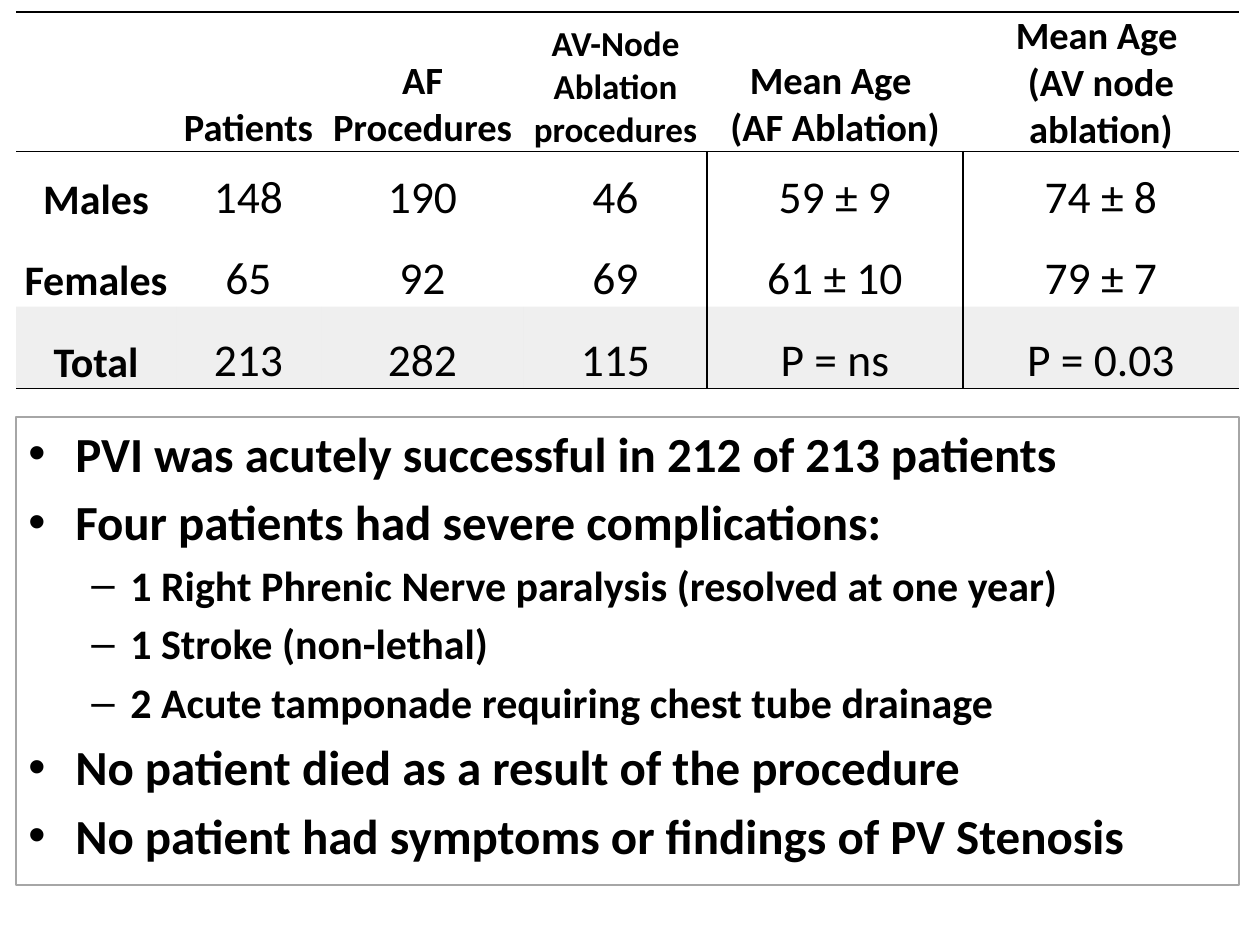
from dataclasses import dataclass

from lxml.etree import SubElement as Sub
from pptx import Presentation
from pptx.dml.color import RGBColor as RGB
from pptx.enum.text import MSO_ANCHOR as Anchor, MSO_AUTO_SIZE as Auto, PP_ALIGN as Align
from pptx.oxml.ns import qn
from pptx.util import Emu, Pt

HEAD = ["", "Patients", "AF\nProcedures", "AV-Node Ablation procedures",
        "Mean Age \n(AF Ablation)", "Mean Age \n(AV node ablation)"]
ROWS = [
    ["Males", "148", "190", "46", "59 ± 9", "74 ± 8"],
    ["Females", "65", "92", "69", "61 ± 10", "79 ± 7"],
    ["Total", "213", "282", "115", "P = ns", "P = 0.03"],
]
POINTS = [
    (0, "PVI was acutely successful in 212 of 213 patients"),
    (0, "Four patients had severe complications:"),
    (1, "1 Right Phrenic Nerve paralysis (resolved at one year)"),
    (1, "1 Stroke (non-lethal)"),
    (1, "2 Acute tamponade requiring chest tube drainage"),
    (0, "No patient died as a result of the procedure"),
    (0, "No patient had symptoms or findings of PV Stenosis"),
]
WIDTHS = [160, 145, 203, 183, 256, 276]
HEIGHTS = [131, 74, 81, 82]
LEFT, TABLE_TOP, BOX_TOP, BOX_HIGH = 16, 12, 417, 468
LEVELS = [("•", 47, 47), ("–", 102, 39)]  # bullet, margin, hanging indent


@dataclass(frozen=True)
class Theme:
    font: str = "Calibri"
    ink: str = "000000"
    frame: str = "A6A6A6"
    shade: str = "D9D9D9"
    head: int = 22
    small: int = 20
    label: int = 24
    value: int = 26
    points: tuple = (28, 24)


THEME = Theme()
NO_GRID = "{2D5ABB26-0587-4C30-8999-92F81FD0307C}"


def px(n):
    return Emu(round(n * 914400 / 126))


def style(par, size, bold):
    for run in par.runs:
        font = run.font
        font.name, font.size, font.bold = THEME.font, Pt(size), bold
        font.color.rgb = RGB.from_string(THEME.ink)


def rule(cell, sides, width=1):
    """Draw cell borders; sides must come in the order L, R, T, B."""
    for side in sides:
        line = Sub(cell._tc.get_or_add_tcPr(), qn(f"a:ln{side}"), w=str(Pt(width)))
        Sub(Sub(line, qn("a:solidFill")), qn("a:srgbClr"), val=THEME.ink)


def shade(cell):
    cell.fill.solid()
    cell.fill.fore_color.rgb = RGB.from_string(THEME.shade)
    tint = cell._tc.tcPr.find(qn("a:solidFill")).find(qn("a:srgbClr"))
    Sub(tint, qn("a:alpha"), val="40000")


def cell_size(row, col):
    if row == 0:
        return THEME.small if col == 3 else THEME.head
    return THEME.value if col else THEME.label


def fill_cell(cell, text, row, col):
    last = row == len(ROWS)
    cell.margin_left = cell.margin_right = cell.margin_top = px(1)
    cell.margin_bottom = 0
    cell.vertical_anchor = Anchor.BOTTOM
    cell.text = text
    for par in cell.text_frame.paragraphs:
        par.alignment = Align.CENTER
        style(par, cell_size(row, col), row == 0 or col == 0)
    if row == 0:
        rule(cell, "TB")
    else:
        sides = ("L" if col in (4, 5) else "") + ("R" if col in (3, 4) else "")
        rule(cell, sides + ("B" if last else ""))
    if last:
        shade(cell)
    else:
        cell.fill.background()


def add_results(slide):
    grid = [HEAD] + ROWS
    frame = slide.shapes.add_table(len(grid), len(HEAD), px(LEFT), px(TABLE_TOP),
                                   px(sum(WIDTHS)), px(sum(HEIGHTS)))
    table = frame.table
    table.first_row = table.horz_banding = False
    table._tbl.tblPr.find(qn("a:tableStyleId")).text = NO_GRID
    for col, wide in zip(table.columns, WIDTHS):
        col.width = px(wide)
    for row, high in zip(table.rows, HEIGHTS):
        row.height = px(high)
    for r, line in enumerate(grid):
        for c, text in enumerate(line):
            fill_cell(table.cell(r, c), text, r, c)


def add_bullet(par, level):
    mark, margin, hang = LEVELS[level]
    props = par._p.get_or_add_pPr()
    props.set("marL", str(px(margin)))
    props.set("indent", str(-px(hang)))
    Sub(Sub(props, qn("a:spcBef")), qn("a:spcPct"), val="20000")
    Sub(props, qn("a:buFont"), typeface="Arial")
    Sub(props, qn("a:buChar"), char=mark)


def add_points(slide):
    box = slide.shapes.add_textbox(px(LEFT), px(BOX_TOP), px(sum(WIDTHS)), px(BOX_HIGH))
    box.line.color.rgb = RGB.from_string(THEME.frame)
    box.line.width = Pt(0.75)
    frame = box.text_frame
    frame.word_wrap = True
    frame.auto_size = Auto.SHAPE_TO_FIT_TEXT
    frame.text = "\n".join(text for _, text in POINTS)
    for par, (level, _) in zip(frame.paragraphs, POINTS):
        par.level = level
        add_bullet(par, level)
        style(par, THEME.points[level], True)


def main():
    deck = Presentation()
    deck.slide_width, deck.slide_height = px(1260), px(945)
    slide = deck.slides.add_slide(deck.slide_layouts[6])
    add_points(slide)
    add_results(slide)
    deck.save("out.pptx")


if __name__ == "__main__":
    main()
